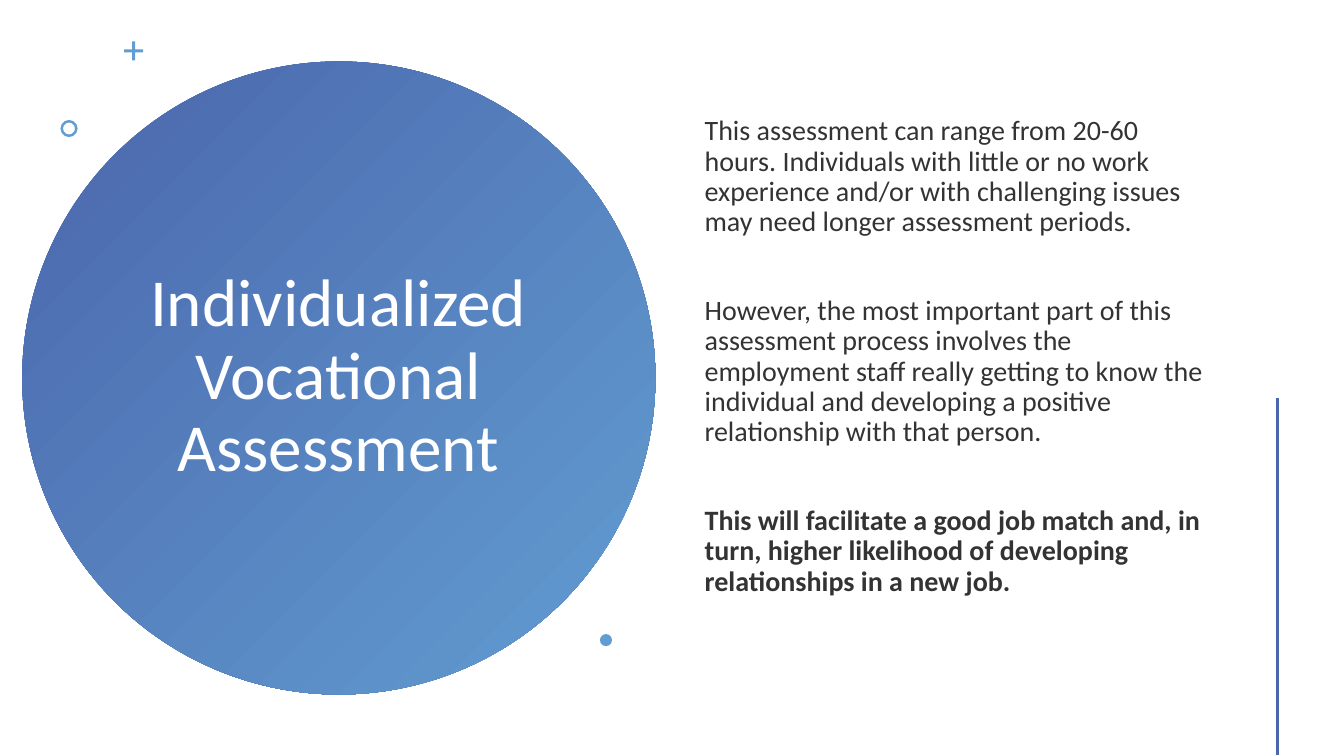
import pptx
import pptx.util
import pptx.dml.color
import pptx.enum.shapes
import pptx.enum.text
import pptx.oxml.ns
from lxml import etree

Inches, Pt = pptx.util.Inches, pptx.util.Pt
SHAPE = pptx.enum.shapes.MSO_SHAPE
ALIGN = pptx.enum.text.PP_ALIGN

NAVY, SKY = "4A66AC", "629DD1"
TITLE = "Individualized Vocational Assessment"
BODY = [
    ("This assessment can range from 20-60 hours. Individuals with little or no work experience "
     "and/or with challenging issues may need longer assessment periods.", False),
    ("However, the most important part of this assessment process involves the employment staff "
     "really getting to know the individual and developing a positive relationship with that person.", False),
    ("This will facilitate a good job match and, in turn, higher likelihood of developing "
     "relationships in a new job.", True),
]
TITLE_BOX = (1.36, 1.41, 3.99, 4.67)
BODY_BOX = (6.89, 0.57, 5.22, 6.38)
CIRCLE = (0.22, 0.61, 6.28)
ACCENTS = [
    (SHAPE.CROSS, 1.23, 0.41, 0.19, 0.42),
    (SHAPE.DONUT, 0.6, 1.19, 0.17, 0.15),
    (SHAPE.OVAL, 5.95, 6.29, 0.12, None),
]
RULE = (12.67, 3.95, 12.67, 7.49)
TITLE_FONT = {"name": "Calibri", "size": Pt(48), "bold": False}
BODY_FONT = {"name": "Calibri", "size": Pt(20)}
FRAME = {"word_wrap": True, "auto_size": pptx.enum.text.MSO_AUTO_SIZE.NONE,
         "vertical_anchor": pptx.enum.text.MSO_ANCHOR.MIDDLE}


def rgb(value):
    return pptx.dml.color.RGBColor.from_string(value)


def apply(obj, values):
    for name, value in values.items():
        setattr(obj, name, value)


def add_round(s, kind, left, top, size):
    sp = s.shapes.add_shape(kind, *map(Inches, (left, top, size, size)))
    sp.shadow.inherit = False
    sp.line.fill.background()
    return sp


def write(p, text, font, color, **layout):
    apply(p, {"line_spacing": 0.9, **layout})
    r = p.add_run()
    r.text = text
    apply(r.font, font)
    r.font.color.rgb = rgb(color)


def main():
    prs = pptx.Presentation()
    prs.slide_width, prs.slide_height = Inches(13.33), Inches(7.5)
    s = prs.slides.add_slide(prs.slide_layouts[5])

    circle = add_round(s, SHAPE.OVAL, *CIRCLE)
    circle.fill.gradient()
    circle.fill.gradient_angle = 315
    for stop, position, color in zip(circle.fill.gradient_stops, (0, 1), (NAVY, SKY)):
        stop.position = position
        stop.color.rgb = rgb(color)

    title = s.shapes.title
    circle._element.addnext(title._element)
    apply(title, dict(zip(("left", "top", "width", "height"), map(Inches, TITLE_BOX))))
    apply(title.text_frame, FRAME)
    write(title.text_frame.paragraphs[0], TITLE, TITLE_FONT, "FFFFFF", alignment=ALIGN.CENTER)

    for kind, left, top, size, adjust in ACCENTS:
        sp = add_round(s, kind, left, top, size)
        sp.fill.solid()
        sp.fill.fore_color.rgb = rgb(SKY)
        if adjust is not None:
            sp.adjustments[0] = adjust

    tf = s.shapes.add_textbox(*map(Inches, BODY_BOX)).text_frame
    apply(tf, {**FRAME, "margin_bottom": Inches(0.49)})
    for i, (text, bold) in enumerate(BODY):
        p = tf.add_paragraph() if i else tf.paragraphs[0]
        write(p, text, {**BODY_FONT, "bold": bold}, "333333",
              space_before=Pt(42 if i else 10), alignment=ALIGN.LEFT)

    rule = s.shapes.add_connector(pptx.enum.shapes.MSO_CONNECTOR.STRAIGHT, *map(Inches, RULE))
    rule.line.color.rgb = rgb(NAVY)
    rule.line.width = Pt(2)
    etree.SubElement(rule._element.spPr, pptx.oxml.ns.qn("a:effectLst"))

    prs.save("out.pptx")


if __name__ == "__main__":
    main()
